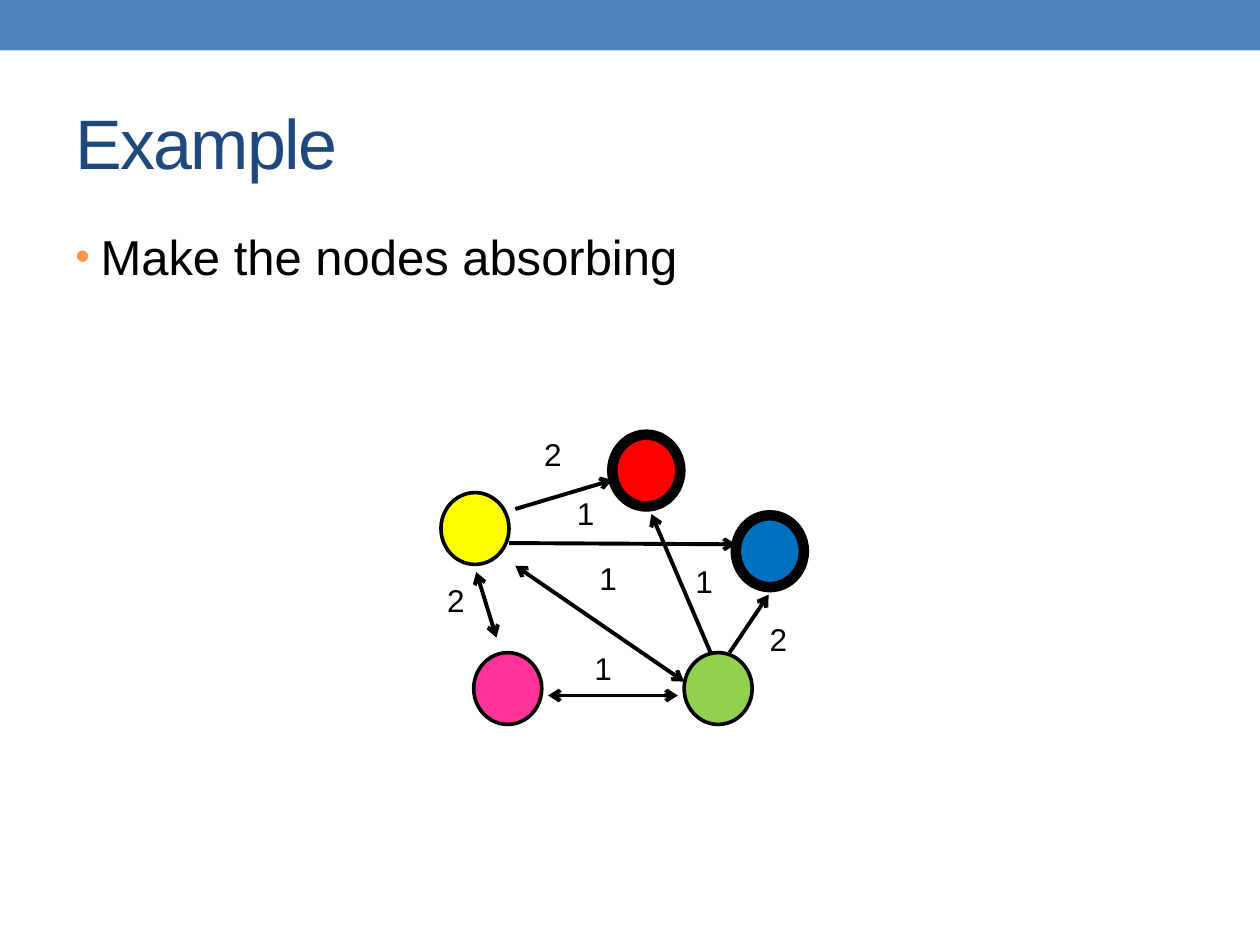
from dataclasses import dataclass

from lxml import etree
from pptx import Presentation
from pptx.dml.color import RGBColor
from pptx.enum.shapes import MSO_CONNECTOR, MSO_SHAPE
from pptx.enum.text import MSO_ANCHOR, MSO_AUTO_SIZE
from pptx.oxml.ns import qn
from pptx.util import Inches, Pt

RECTANGLE = MSO_SHAPE.RECTANGLE
OVAL = MSO_SHAPE.OVAL
STRAIGHT = MSO_CONNECTOR.STRAIGHT
TOP, MIDDLE = MSO_ANCHOR.TOP, MSO_ANCHOR.MIDDLE
FIT_SHAPE = MSO_AUTO_SIZE.SHAPE_TO_FIT_TEXT


@dataclass(frozen=True)
class Theme:
    font: str = "Arial"
    band: str = "4F81BD"
    title: str = "1F497D"
    bullet: str = "F79646"
    ink: str = "000000"
    title_size: float = 40
    body_size: float = 28
    weight_size: float = 18
    edge_width: float = 2.25
    node_width: float = 2.08
    absorbing_width: float = 6


@dataclass(frozen=True)
class Node:
    left: float
    top: float
    color: str
    absorbing: bool = False


@dataclass(frozen=True)
class Edge:
    start: tuple[float, float]
    end: tuple[float, float]
    two_way: bool = False


@dataclass(frozen=True)
class Weight:
    left: float
    top: float
    value: str


THEME = Theme()
NODE_SIZE = (0.54, 0.57)
WEIGHT_SIZE = (0.34, 0.4)

EDGES = [
    Edge((4.35, 5.52), (5.38, 5.52), two_way=True),
    Edge((3.94, 5.06), (3.78, 4.54), two_way=True),
    Edge((4.09, 4.04), (4.86, 3.81)),
    Edge((4.04, 4.31), (5.84, 4.32)),
    Edge((5.64, 5.18), (5.17, 4.08)),
    Edge((5.79, 5.18), (6.1, 4.72)),
    Edge((5.43, 5.41), (4.09, 4.49), two_way=True),
]
NODES = [
    Node(4.86, 3.45, "FF0000", absorbing=True),
    Node(5.84, 4.09, "0070C0", absorbing=True),
    Node(5.43, 5.18, "92D050"),
    Node(3.76, 5.18, "FF3399"),
    Node(3.5, 3.91, "FFFF00"),
]
WEIGHTS = [
    Weight(4.22, 3.4, "2"),
    Weight(3.45, 4.56, "2"),
    Weight(4.48, 3.87, "1"),
    Weight(4.66, 4.39, "1"),
    Weight(4.62, 5.1, "1"),
    Weight(6.01, 4.87, "2"),
    Weight(5.42, 4.41, "1"),
]


def rgb(color: str) -> RGBColor:
    """Turn a hex string into a colour."""
    return RGBColor.from_string(color)


def add_text(slide, box: tuple, text: str, size: float, color: str, anchor=TOP, wrap=True):
    """Add a text box holding one styled paragraph."""
    frame = slide.shapes.add_textbox(*map(Inches, box)).text_frame
    frame.text = text
    frame.word_wrap = wrap
    frame.vertical_anchor = anchor
    font = frame.paragraphs[0].runs[0].font
    font.name, font.size = THEME.font, Pt(size)
    font.color.rgb = rgb(color)
    return frame


def add_band(slide) -> None:
    """Draw the coloured band along the top."""
    band = slide.shapes.add_shape(RECTANGLE, 0, 0, Inches(10), Inches(0.4))
    band.shadow.inherit = False
    band.fill.solid()
    band.fill.fore_color.rgb = rgb(THEME.band)
    band.line.fill.background()


def add_title(slide, text: str) -> None:
    """Write the tightly spaced title."""
    frame = add_text(slide, (0.5, 0.58, 9, 1.08), text, THEME.title_size, THEME.title, MIDDLE)
    frame.paragraphs[0].runs[0].font._element.set("spc", "-100")


def add_bullet(slide, text: str) -> None:
    """Write the bulleted statement with a hanging indent."""
    frame = add_text(slide, (0.5, 1.75, 9, 5.33), text, THEME.body_size, THEME.ink)
    paragraph = frame.paragraphs[0]
    paragraph.space_before = Pt(0.2 * THEME.body_size)
    properties = paragraph._p.get_or_add_pPr()
    properties.set("marL", str(Inches(0.2)))
    properties.set("indent", str(Inches(-0.2)))
    bullet_color = etree.SubElement(properties, qn("a:buClr"))
    etree.SubElement(bullet_color, qn("a:srgbClr"), val=THEME.bullet)
    etree.SubElement(properties, qn("a:buSzPct"), val="85000")
    etree.SubElement(properties, qn("a:buFont"), typeface=THEME.font)
    etree.SubElement(properties, qn("a:buChar"), char="•")


def add_edge(slide, edge: Edge) -> None:
    """Draw an arrow, pointed at both ends when two-way."""
    arrow = slide.shapes.add_connector(STRAIGHT, *map(Inches, edge.start + edge.end))
    arrow.line.color.rgb = rgb(THEME.ink)
    arrow.line.width = Pt(THEME.edge_width)
    outline = arrow.line._get_or_add_ln()
    for tip in ("a:headEnd", "a:tailEnd") if edge.two_way else ("a:tailEnd",):
        etree.SubElement(outline, qn(tip), type="arrow")
    etree.SubElement(arrow._element.spPr, qn("a:effectLst"))


def add_node(slide, node: Node) -> None:
    """Draw a graph node, heavily outlined when absorbing."""
    circle = slide.shapes.add_shape(OVAL, *map(Inches, (node.left, node.top, *NODE_SIZE)))
    circle.shadow.inherit = False
    circle.fill.solid()
    circle.fill.fore_color.rgb = rgb(node.color)
    circle.line.color.rgb = rgb(THEME.ink)
    circle.line.width = Pt(THEME.absorbing_width if node.absorbing else THEME.node_width)


def add_weight(slide, weight: Weight) -> None:
    """Write the weight of an edge."""
    box = (weight.left, weight.top, *WEIGHT_SIZE)
    frame = add_text(slide, box, weight.value, THEME.weight_size, THEME.ink, wrap=False)
    frame.auto_size = FIT_SHAPE


def main() -> None:
    """Build and save the slide."""
    deck = Presentation()
    deck.slide_width, deck.slide_height = Inches(10), Inches(7.5)
    slide = deck.slides.add_slide(deck.slide_layouts[6])
    add_band(slide)
    add_title(slide, "Example")
    add_bullet(slide, "Make the nodes absorbing")
    for edge in EDGES:
        add_edge(slide, edge)
    for node in NODES:
        add_node(slide, node)
    for weight in WEIGHTS:
        add_weight(slide, weight)
    deck.save("out.pptx")


if __name__ == "__main__":
    main()
